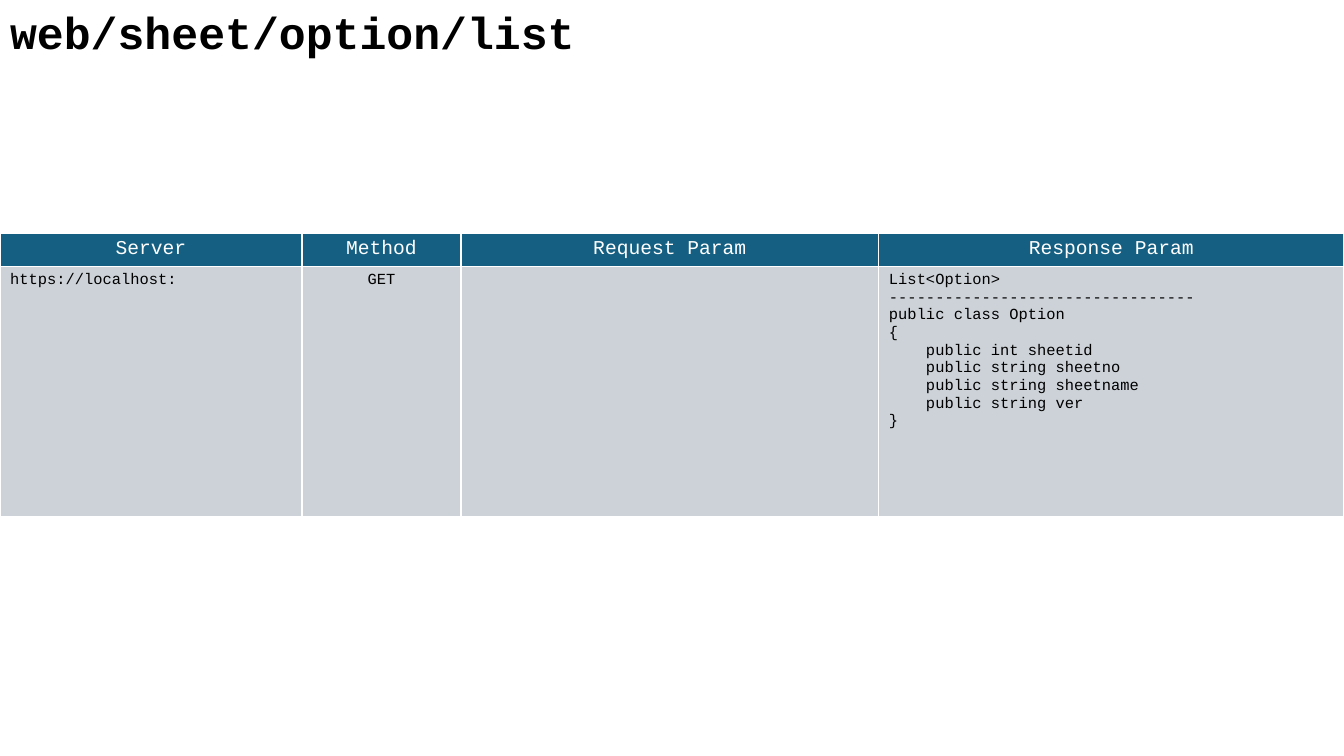
import pptx
import pptx.dml.color
import pptx.enum.text
import pptx.oxml
import pptx.oxml.ns
import pptx.util

SLIDE_WIDTH, SLIDE_HEIGHT = 1344, 756
EMU_PER_PX = 12192000 / SLIDE_WIDTH
FONT = "Courier New"
BLACK = pptx.dml.color.RGBColor(0x00, 0x00, 0x00)
WHITE = pptx.dml.color.RGBColor(0xFF, 0xFF, 0xFF)
HEADER_BLUE = pptx.dml.color.RGBColor(0x15, 0x60, 0x82)
BODY_GREY = pptx.dml.color.RGBColor(0xCC, 0xD2, 0xD8)
LEFT = pptx.enum.text.PP_ALIGN.LEFT
CENTER = pptx.enum.text.PP_ALIGN.CENTER


def px(length):
    return pptx.util.Emu(round(length * EMU_PER_PX))


def write(text_frame, text, size, color, align=LEFT, bold=False):
    for index, line in enumerate(text.split("\n")):
        paragraph = text_frame.paragraphs[0] if index == 0 else text_frame.add_paragraph()
        paragraph.alignment = align
        run = paragraph.add_run()
        run.text = line
        run.font.name = FONT
        run.font.size = pptx.util.Pt(size)
        run.font.bold = bold
        run.font.color.rgb = color


presentation = pptx.Presentation()
presentation.slide_width = px(SLIDE_WIDTH)
presentation.slide_height = px(SLIDE_HEIGHT)
slide = presentation.slides.add_slide(presentation.slide_layouts[5])

# Title
title = slide.shapes.title
title.left, title.top, title.width, title.height = px(0), px(0), px(953), px(65)
title.text_frame.word_wrap = True
title.text_frame.auto_size = pptx.enum.text.MSO_AUTO_SIZE.SHAPE_TO_FIT_TEXT
title.text_frame.vertical_anchor = pptx.enum.text.MSO_ANCHOR.TOP
write(title.text_frame, "web/sheet/option/list", size=32, color=BLACK, bold=True)

# Table contents
RESPONSE = """List<Option>
---------------------------------
public class Option
{
    public int sheetid
    public string sheetno
    public string sheetname
    public string ver
}"""
COLUMNS = [  # width, heading, value, value alignment
    (302, "Server", "https://localhost:", LEFT),
    (159, "Method", "GET", CENTER),
    (418, "Request Param", "", LEFT),
    (465, "Response Param", RESPONSE, LEFT),
]
ROW_HEIGHTS = [33, 250]

# Table grid
table = slide.shapes.add_table(
    len(ROW_HEIGHTS), len(COLUMNS), px(0), px(233), px(SLIDE_WIDTH), px(sum(ROW_HEIGHTS))
).table
for row, height in zip(table.rows, ROW_HEIGHTS):
    row.height = px(height)

# Cell text
for index, (width, heading, value, align) in enumerate(COLUMNS):
    table.columns[index].width = px(width)
    write(table.cell(0, index).text_frame, heading, size=14, color=WHITE, align=CENTER)
    if value:
        write(table.cell(1, index).text_frame, value, size=11, color=BLACK, align=align)

# Cell borders and fills; borders come before the fill in the cell properties
for row, fill_color in zip(table.rows, (HEADER_BLUE, BODY_GREY)):
    for cell in row.cells:
        properties = cell._tc.get_or_add_tcPr()
        for side in ("lnL", "lnR", "lnT", "lnB"):
            properties.append(pptx.oxml.parse_xml(
                f'<a:{side} {pptx.oxml.ns.nsdecls("a")} w="{pptx.util.Pt(1)}">'
                f'<a:solidFill><a:srgbClr val="{WHITE}"/></a:solidFill></a:{side}>'
            ))
        cell.fill.solid()
        cell.fill.fore_color.rgb = fill_color

presentation.save("out.pptx")
